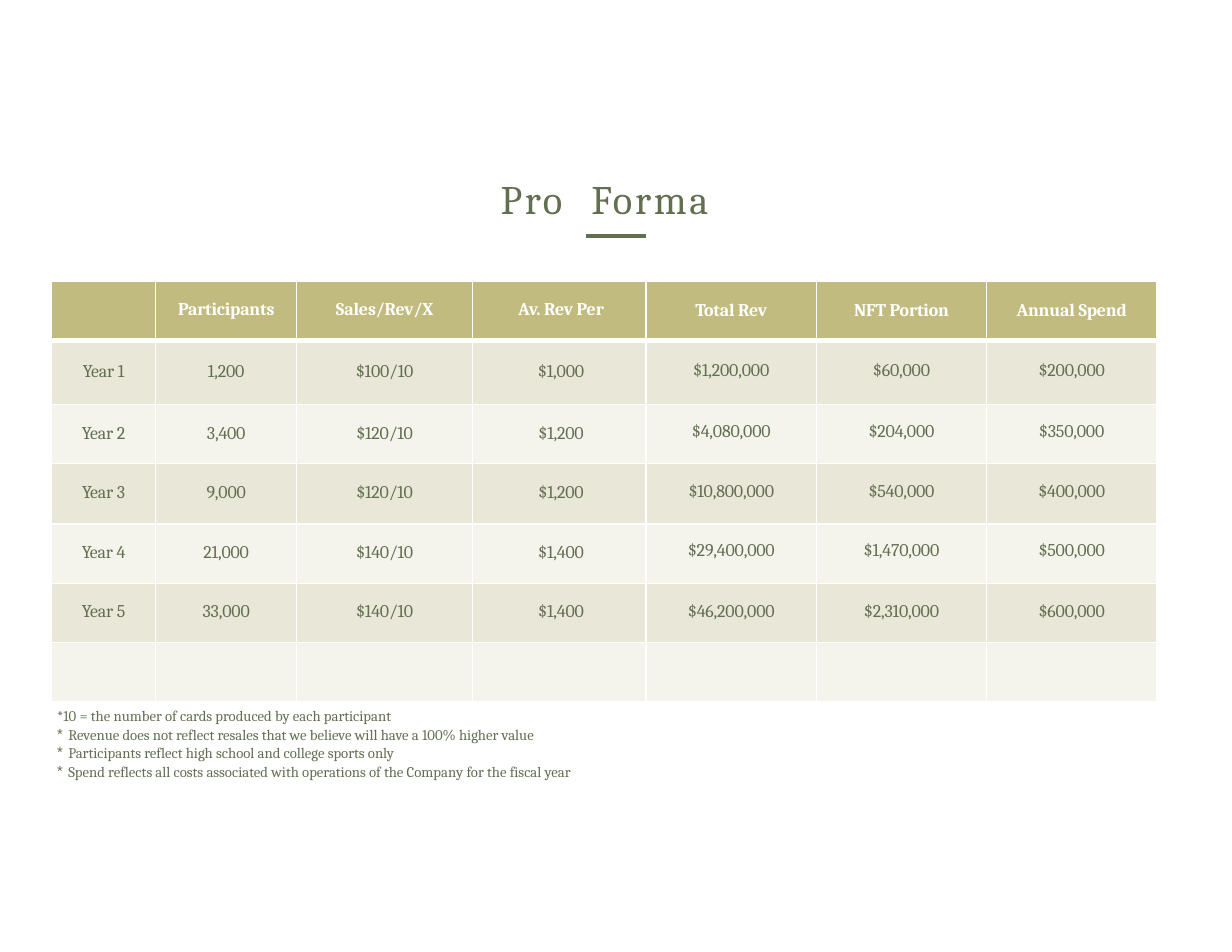
import pptx
import pptx.util
import pptx.dml.color
import pptx.enum.text
import pptx.oxml.ns
from lxml import etree

Inches, Pt = pptx.util.Inches, pptx.util.Pt
RGB = pptx.dml.color.RGBColor
PP_ALIGN = pptx.enum.text.PP_ALIGN
TOP = pptx.enum.text.MSO_ANCHOR.TOP
NONE = pptx.enum.text.MSO_AUTO_SIZE.NONE
qn = pptx.oxml.ns.qn

FONT = "Cambria"
OLIVE = RGB(0x62, 0x6F, 0x51)
GOLD = RGB(0xC2, 0xBB, 0x80)
SAND = RGB(0xE9, 0xE7, 0xD7)
CREAM = RGB(0xF4, 0xF4, 0xEC)
WHITE = RGB(0xFF, 0xFF, 0xFF)


def style(para, size, color, space, bold=False):
    """Format every run of a paragraph; space is letter spacing in points."""
    for run in para.runs:
        run.font.name, run.font.size = FONT, Pt(size)
        run.font.bold, run.font.color.rgb = bold, color
        run._r.get_or_add_rPr().set("spc", str(round(space * 100)))


def place(shape, left, top, width, height):
    """Move a placeholder and trim its frame."""
    shape.left, shape.top = Inches(left), Inches(top)
    shape.width, shape.height = Inches(width), Inches(height)
    frame = shape.text_frame
    frame.margin_left = frame.margin_right = frame.margin_bottom = 0
    frame.margin_top = Inches(0.02)
    frame.vertical_anchor, frame.auto_size = TOP, NONE
    frame.word_wrap = True
    return frame


deck = pptx.Presentation()
deck.slide_width, deck.slide_height = Inches(11), Inches(8.5)
slide = deck.slides.add_slide(deck.slide_layouts[1])

# Title, its two words set apart by a tab
frame = place(slide.shapes.title, 4.46, 1.53, 2.07, 0.47)
frame.text = "Pro\tForma"
para = frame.paragraphs[0]
para.alignment = PP_ALIGN.LEFT
props = para._p.get_or_add_pPr()
props.set("marL", str(Inches(0.01)))
tabs = etree.SubElement(props, qn("a:tabLst"))
etree.SubElement(tabs, qn("a:tab"), pos=str(Inches(0.81)), algn="l")
style(para, 26, OLIVE, 1.75)

# Rule under the title
rule = slide.shapes.add_connector(
    1, Inches(5.23), Inches(2.11), Inches(5.77), Inches(2.11))
rule.line.color.rgb, rule.line.width = OLIVE, Pt(2.5)
etree.SubElement(rule._element.spPr, qn("a:effectLst"))

# Table
rows = [
    ["", "Participants", "Sales/Rev/X", "Av. Rev Per", "Total Rev",
     "NFT Portion", "Annual Spend"],
    ["Year 1", "1,200", "$100/10", "$1,000", "$1,200,000", "$60,000", "$200,000"],
    ["Year 2", "3,400", "$120/10", "$1,200", "$4,080,000", "$204,000", "$350,000"],
    ["Year 3", "9,000", "$120/10", "$1,200", "$10,800,000", "$540,000", "$400,000"],
    ["Year 4", "21,000", "$140/10", "$1,400", "$29,400,000", "$1,470,000", "$500,000"],
    ["Year 5", "33,000", "$140/10", "$1,400", "$46,200,000", "$2,310,000", "$600,000"],
    [""] * 7,
]
widths = [0.93, 1.26, 1.57, 1.55, 1.52, 1.52, 1.52]
heights = [0.53, 0.57, 0.53, 0.54, 0.53, 0.53, 0.53]
# Space above the text: first four columns, last three columns
pads = [(0.16, 0.17), (0.19, 0.18), (0.17, 0.15), (0.17, 0.16),
        (0.16, 0.15), (0.16, 0.16), (0, 0)]
grid = slide.shapes.add_table(
    len(rows), len(widths), Inches(0.46), Inches(2.51),
    Inches(sum(widths)), Inches(sum(heights))).table
for col, width in zip(grid.columns, widths):
    col.width = Inches(width)

for r, row in enumerate(rows):
    grid.rows[r].height = Inches(heights[r])
    for c, text in enumerate(row):
        cell = grid.cell(r, c)
        cell.margin_left = cell.margin_right = cell.margin_bottom = 0
        cell.margin_top = Inches(pads[r][c > 3])
        cell.vertical_anchor = TOP

        # White borders, thicker below the header
        for side in "LRTB":
            thick = (r, side) in [(0, "B"), (1, "T")]
            edge = etree.SubElement(cell._tc.get_or_add_tcPr(), qn("a:ln" + side),
                                    w=str(Pt(3 if thick else 1)))
            paint = etree.SubElement(edge, qn("a:solidFill"))
            etree.SubElement(paint, qn("a:srgbClr"), val=str(WHITE))
        cell.fill.solid()
        cell.fill.fore_color.rgb = GOLD if r == 0 else SAND if r % 2 else CREAM

        if text:
            cell.text_frame.text = text
            para = cell.text_frame.paragraphs[0]
            para.alignment = PP_ALIGN.CENTER
            if c == 3:
                para._p.get_or_add_pPr().set("marL", str(Inches(0.03)))
            style(para, 11.5, WHITE if r == 0 else OLIVE, -0.1, r == 0)

# Notes below the table
notes = [
    "*10 = the number of cards produced by each participant",
    "Revenue does not reflect resales that we believe will have a 100% higher value",
    "Participants reflect high school and college sports only",
    "Spend reflects all costs associated with operations of the Company for the fiscal year",
]
frame = place(slide.placeholders[1], 0.5, 6.29, 5.2, 0.69)
for n, note in enumerate(notes):
    para = frame.add_paragraph() if n else frame.paragraphs[0]
    para.text = note
    para.alignment = PP_ALIGN.LEFT
    para.space_before = Pt(0.5 if n else 0)
    props = para._p.get_or_add_pPr()
    props.set("marL", str(Inches(0.11 if n else 0.01)))
    props.set("indent", str(Inches(-0.1 if n else 0)))
    if n:
        etree.SubElement(props, qn("a:buChar"), char="*")
    else:
        etree.SubElement(props, qn("a:buNone"))
    style(para, 9.5, OLIVE, 0)

deck.save("out.pptx")
